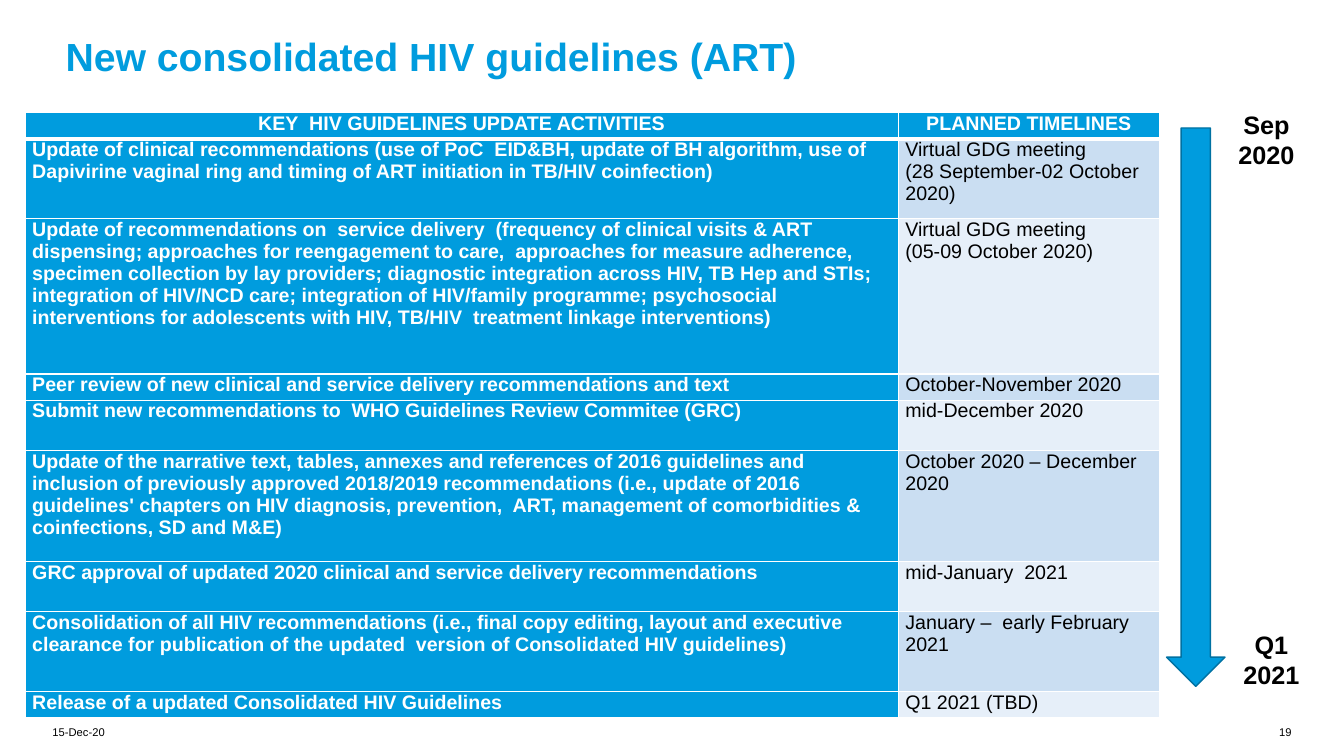
from dataclasses import dataclass

from lxml.etree import SubElement
from pptx import Presentation
from pptx.dml.color import RGBColor as RGB
from pptx.enum.shapes import MSO_SHAPE as Shape
from pptx.enum.text import MSO_ANCHOR as Anchor, PP_ALIGN as Align
from pptx.oxml.ns import qn
from pptx.util import Inches, Pt


@dataclass(frozen=True)
class Theme:
    """Colours, font and type sizes of the slide."""
    font: str = "Arial"
    blue: str = "009CDE"
    dark_blue: str = "0071A2"
    bands: tuple = ("CADEF2", "E6EFF9")
    white: str = "FFFFFF"
    black: str = "000000"
    title: int = 28
    label: int = 18
    body: int = 14
    footer: int = 8


THEME = Theme()
HEADER = ("KEY  HIV GUIDELINES UPDATE ACTIVITIES", "PLANNED TIMELINES")
ACTIVITIES = [
    (0.79, "Update of clinical recommendations (use of PoC  EID&ВН, update of ВН algorithm, use of "
     "Dapivirine vaginal ring and timing of ART initiation in TB/HIV coinfection)",
     "Virtual GDG meeting\n(28 September-02 October 2020)"),
    (1.54, "Update of recommendations on  service delivery  (frequency of clinical visits & ART "
     "dispensing; approaches for reengagement to care,  approaches for measure adherence, "
     "specimen collection by lay providers; diagnostic integration across HIV, TB Hep and STIs; "
     "integration of HIV/NCD care; integration of HIV/family programme; psychosocial "
     "interventions for adolescents with HIV, TB/HIV  treatment linkage interventions)",
     "Virtual GDG meeting\n(05-09 October 2020)"),
    (0.26, "Peer review of new clinical and service delivery recommendations and text",
     "October-November 2020"),
    (0.5, "Submit new recommendations to  WHO Guidelines Review Commitee (GRC)",
     "mid-December 2020"),
    (1.1, "Update of the narrative text, tables, annexes and references of 2016 guidelines and "
     "inclusion of previously approved 2018/2019 recommendations (i.e., update of 2016 "
     "guidelines' chapters on HIV diagnosis, prevention,  ART, management of comorbidities & "
     "coinfections, SD and M&E)",
     "October 2020 – December 2020"),
    (0.5, "GRC approval of updated 2020 clinical and service delivery recommendations",
     "mid-January  2021"),
    (0.79, "Consolidation of all HIV recommendations (i.e., final copy editing, layout and executive "
     "clearance for publication of the updated  version of Consolidated HIV guidelines)",
     "January –  early February 2021"),
    (0.26, "Release of a updated Consolidated HIV Guidelines", "Q1 2021 (TBD)"),
]


def write(tf, text, size, color, bold=False, align=Align.LEFT):
    """Fill a text frame and format its runs."""
    tf.text = text
    tf.word_wrap = True
    for p in tf.paragraphs:
        p.alignment = align
        for r in p.runs:
            r.font.name = THEME.font
            r.font.size = Pt(size)
            r.font.bold = bold
            r.font.color.rgb = RGB.from_string(color)


def add_text(s, box, text, size, color, bold=False, align=Align.LEFT,
             anchor=Anchor.TOP, insets=(0, 0, 0, 0)):
    """Add a text box and return its text frame."""
    tf = s.shapes.add_textbox(*map(Inches, box)).text_frame
    tf.margin_left, tf.margin_top, tf.margin_right, tf.margin_bottom = map(Inches, insets)
    tf.vertical_anchor = anchor
    write(tf, text, size, color, bold, align)
    return tf


def add_title(s, box):
    """Add the slide title."""
    tf = add_text(s, box, "New consolidated HIV guidelines (ART)", THEME.title, THEME.blue,
                  bold=True, anchor=Anchor.BOTTOM, insets=(0.02, 0, 0.39, 0))
    tf.paragraphs[0].line_spacing = 0.9


def style_cell(cell, fill, top=1, bottom=1):
    """Set the borders, margins and fill of a table cell."""
    tc_pr = cell._tc.get_or_add_tcPr()
    for side, width in (("L", 1), ("R", 1), ("T", top), ("B", bottom)):
        ln = SubElement(tc_pr, qn(f"a:ln{side}"), w=str(Pt(width)))
        SubElement(SubElement(ln, qn("a:solidFill")), qn("a:srgbClr"), val=THEME.white)
    cell.margin_left = cell.margin_right = Inches(0.07)
    cell.margin_top = cell.margin_bottom = 0
    cell.fill.solid()
    cell.fill.fore_color.rgb = RGB.from_string(fill)


def add_activities(s, box, split=8.66, header_height=0.26):
    """Add the table of activities and timelines."""
    table = s.shapes.add_table(len(ACTIVITIES) + 1, 2, *map(Inches, box)).table
    table.horz_banding = False
    table.columns[0].width = Inches(split)
    table.columns[1].width = Inches(box[2] - split)
    table.rows[0].height = Inches(header_height)
    for cell, text in zip(table.rows[0].cells, HEADER):
        style_cell(cell, THEME.blue, bottom=3)
        write(cell.text_frame, text, THEME.body, THEME.white, True, Align.CENTER)
    for i, (height, activity, timeline) in enumerate(ACTIVITIES):
        row = table.rows[i + 1]
        row.height = Inches(height)
        top = 3 if i == 0 else 1
        style_cell(row.cells[0], THEME.blue, top)
        write(row.cells[0].text_frame, activity, THEME.body, THEME.white, True)
        style_cell(row.cells[1], THEME.bands[i % 2], top)
        write(row.cells[1].text_frame, timeline, THEME.body, THEME.black)


def add_timeline(s, box):
    """Add the downward arrow with its start and end labels."""
    x, y, w, h = box
    arrow = s.shapes.add_shape(Shape.DOWN_ARROW, *map(Inches, (x, y + 0.15, 0.58, h - 0.14)))
    arrow.shadow.inherit = False
    arrow.fill.solid()
    arrow.fill.fore_color.rgb = RGB.from_string(THEME.blue)
    arrow.line.color.rgb = RGB.from_string(THEME.dark_blue)
    arrow.line.width = Pt(1)
    for dx, dy, text in ((0.58, 0, "Sep 2020"), (0.63, h - 0.52, "Q1 2021")):
        add_text(s, (x + dx, y + dy, 0.82, 0.52), text, THEME.label, THEME.black, True,
                 Align.CENTER, Anchor.MIDDLE, (0.1, 0.05, 0.1, 0.05))


def add_footer(s, box):
    """Add the date at the left and the page number at the right."""
    x, y, w, h = box
    add_text(s, (x, y, 0.86, h), "15-Dec-20", THEME.footer, THEME.black)
    add_text(s, (x + w - 0.32, y, 0.32, h), "19", THEME.footer, THEME.black, align=Align.RIGHT)


def main():
    """Build and save the slide."""
    prs = Presentation()
    prs.slide_width, prs.slide_height = Inches(13.33), Inches(7.5)
    s = prs.slides.add_slide(prs.slide_layouts[6])
    add_title(s, (0.63, 0.11, 8.92, 0.68))
    add_activities(s, (0.25, 1.12, 11.25, 6))
    add_footer(s, (0.52, 7.2, 12.29, 0.2))
    add_timeline(s, (11.57, 1.12, 1.45, 5.68))
    prs.save("out.pptx")


if __name__ == "__main__":
    main()
